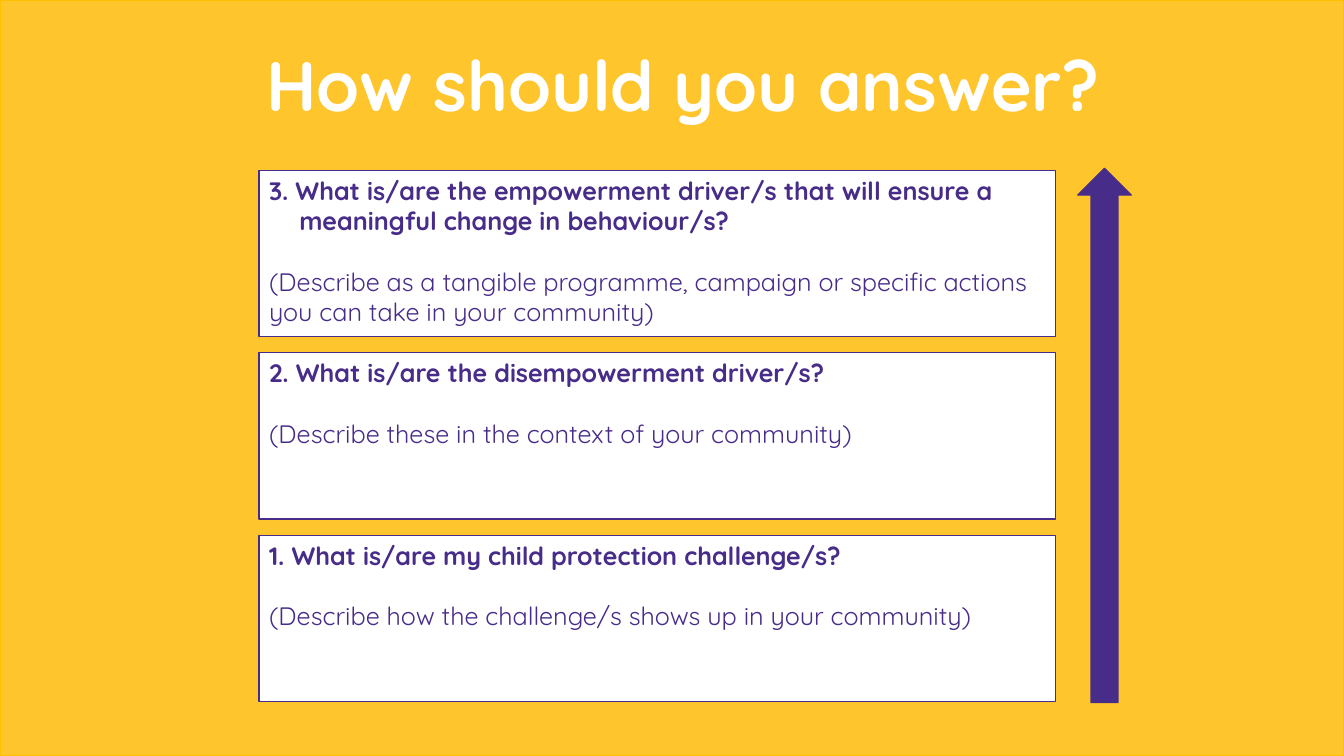
from pptx import Presentation
from pptx.dml.color import RGBColor
from pptx.enum.shapes import MSO_SHAPE as SHAPE
from pptx.enum.text import MSO_ANCHOR as ANCHOR, MSO_AUTO_SIZE as AUTO_SIZE, PP_ALIGN as ALIGN
from pptx.util import Inches, Pt

YELLOW, AMBER, WHITE, PURPLE = "FEC52C", "FFC000", "FFFFFF", "482C89"
FONT = "Quicksand"
WIDTH, HEIGHT = 13.33, 7.5
BOX_LEFT, BOX_TOP, BOX_WIDTH, BOX_HEIGHT, BOX_PITCH = 2.57, 1.69, 7.9, 1.65, 1.81

QUESTIONS = [
    ("3. What is/are the empowerment driver/s that will ensure a meaningful change in behaviour/s?",
     "(Describe as a tangible programme, campaign or specific actions you can take in your community)",
     0.3),
    ("2. What is/are the disempowerment driver/s?",
     "(Describe these in the context of your community)", 0),
    ("1. What is/are my child protection challenge/s?",
     "(Describe how the challenge/s shows up in your community)", 0),
]


def color(value):
    """Turn a hex string into a colour."""
    return RGBColor.from_string(value)


def add_shape(slide, kind, left, top, width, height, fill, line):
    """Add a filled and outlined preset shape."""
    shape = slide.shapes.add_shape(kind, Inches(left), Inches(top), Inches(width), Inches(height))
    shape.shadow.inherit = False
    shape.fill.solid()
    shape.fill.fore_color.rgb = color(fill)
    shape.line.color.rgb = color(line)
    shape.line.width = Pt(1)
    return shape


def write(paragraph, text, size=18, fill=PURPLE, bold=False, align=ALIGN.LEFT, before=0, hanging=0):
    """Write formatted text into a paragraph."""
    if hanging:
        properties = paragraph._p.get_or_add_pPr()
        properties.set("marL", str(Inches(hanging)))
        properties.set("indent", str(-Inches(hanging)))
    paragraph.alignment = align
    if before:
        paragraph.space_before = Pt(before)
    run = paragraph.add_run()
    run.text = text
    run.font.name = FONT
    run.font.size = Pt(size)
    run.font.bold = bold
    run.font.color.rgb = color(fill)


def add_title(slide, text):
    """Add the centred slide title."""
    box = slide.shapes.add_textbox(Inches(2.01), Inches(0.36), Inches(9.53), Inches(0.94))
    frame = box.text_frame
    frame.word_wrap = True
    frame.auto_size = AUTO_SIZE.SHAPE_TO_FIT_TEXT
    write(frame.paragraphs[0], text, size=50, fill=WHITE, bold=True, align=ALIGN.CENTER)


def add_question(slide, top, question, hint, hanging):
    """Add a white box with a question and its hint."""
    box = add_shape(slide, SHAPE.RECTANGLE, BOX_LEFT, top, BOX_WIDTH, BOX_HEIGHT, WHITE, PURPLE)
    frame = box.text_frame
    frame.word_wrap = True
    frame.vertical_anchor = ANCHOR.TOP
    write(frame.paragraphs[0], question, bold=True, hanging=hanging)
    write(frame.add_paragraph(), hint, before=21.6)


def main():
    """Build and save the slide."""
    presentation = Presentation()
    presentation.slide_width = Inches(WIDTH)
    presentation.slide_height = Inches(HEIGHT)
    slide = presentation.slides.add_slide(presentation.slide_layouts[6])
    add_shape(slide, SHAPE.RECTANGLE, 0, 0, WIDTH, HEIGHT, YELLOW, AMBER)
    add_title(slide, "How should you answer?")
    for row, (question, hint, hanging) in enumerate(QUESTIONS):
        add_question(slide, BOX_TOP + row * BOX_PITCH, question, hint, hanging)
    add_shape(slide, SHAPE.UP_ARROW, 10.69, 1.67, 0.53, 5.3, PURPLE, PURPLE)
    presentation.save("out.pptx")


if __name__ == "__main__":
    main()
